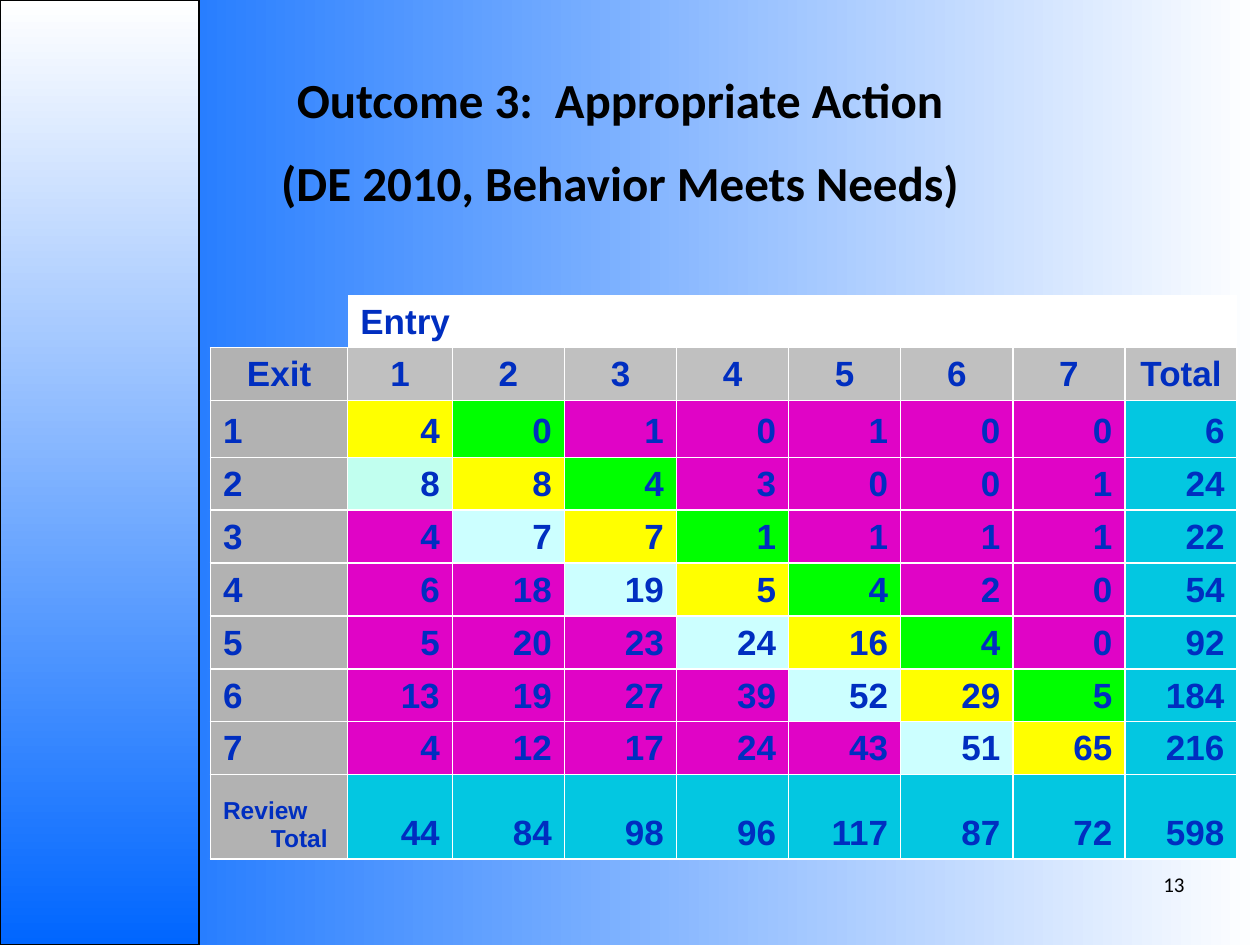
from dataclasses import dataclass

from lxml import etree
from pptx import Presentation, util as u
from pptx.dml.color import RGBColor
from pptx.enum import shapes, text
from pptx.oxml.ns import qn


@dataclass(frozen=True)
class Theme:
    heading_font: str = "Calibri"
    table_font: str = "Arial"
    title_size: float = 28
    table_size: float = 20
    review_size: float = 14
    number_size: float = 12
    black: str = "000000"
    white: str = "FFFFFF"
    blue: str = "0066FF"
    ink: str = "002EC0"
    label: str = "B2B2B2"
    header: str = "C0C0C0"
    same: str = "FFFF00"
    one_up: str = "00FF00"
    one_down: str = "CCFFFF"
    first_down: str = "C1FFEF"
    far: str = "E004C6"
    total: str = "03C7E1"


THEME = Theme()
ALIGN = text.PP_ALIGN
TITLE = ["Outcome 3:  Appropriate Action", "(DE 2010, Behavior Meets Needs)"]
PAGE_NUMBER = "13"
ENTRY_LABEL = "Entry"
HEADINGS = ["Exit", "1", "2", "3", "4", "5", "6", "7", "Total"]
REVIEW_LABEL = "Review Total"
EXIT_BY_ENTRY = [
    [4, 0, 1, 0, 1, 0, 0],
    [8, 8, 4, 3, 0, 0, 1],
    [4, 7, 7, 1, 1, 1, 1],
    [6, 18, 19, 5, 4, 2, 0],
    [5, 20, 23, 24, 16, 4, 0],
    [13, 19, 27, 39, 52, 29, 5],
    [4, 12, 17, 24, 43, 51, 65],
]
COLUMN_WIDTHS = [1.09, 0.83] + [0.89] * 7
ROW_HEIGHTS = [0.42] * 3 + [0.45] + [0.42] * 6 + [0.67]
HEADER_ROW = 2


def rgb(color):
    return RGBColor.from_string(color)


def set_gradient(fill, start, end, angle):
    fill.gradient()
    fill.gradient_angle = angle
    for stop, color in zip(fill.gradient_stops, (start, end)):
        stop.color.rgb = rgb(color)


def add_run(paragraph, words, font, size, color, bold):
    run = paragraph.add_run()
    run.text = words
    run.font.name = font
    run.font.size = u.Pt(size)
    run.font.color.rgb = rgb(color)
    run.font.bold = bold


def add_text(slide, lines, box, size, bold, align, anchor, auto_size):
    frame = slide.shapes.add_textbox(*map(u.Inches, box)).text_frame
    frame.word_wrap = True
    frame.auto_size = auto_size
    frame.vertical_anchor = anchor
    for index, line in enumerate(lines):
        paragraph = frame.add_paragraph() if index else frame.paragraphs[0]
        paragraph.alignment = align
        if index:
            paragraph.space_before = u.Pt(size / 2)
        add_run(paragraph, line, THEME.heading_font, size, THEME.black, bold)


def set_borders(cell, visible):
    properties = cell._tc.get_or_add_tcPr()
    for side in "LRTB":
        border = etree.SubElement(properties, qn(f"a:ln{side}"), w=str(u.Pt(1)))
        if side in visible:
            solid = etree.SubElement(border, qn("a:solidFill"))
            etree.SubElement(solid, qn("a:srgbClr"), val=THEME.white)
        else:
            etree.SubElement(border, qn("a:noFill"))


def style_cell(cell, color, borders):
    set_borders(cell, borders)
    cell.vertical_anchor = text.MSO_ANCHOR.BOTTOM
    if color:
        cell.fill.solid()
        cell.fill.fore_color.rgb = rgb(color)
    else:
        cell.fill.background()


def write_cell(cell, words, align, size=THEME.table_size):
    paragraph = cell.text_frame.paragraphs[0]
    paragraph.alignment = align
    properties = paragraph._p.get_or_add_pPr()
    properties.set("marL", str(u.Inches(0.38)))
    properties.set("indent", str(-u.Inches(0.38)))
    add_run(paragraph, words, THEME.table_font, size, THEME.ink, True)


def cell_color(row, column):
    if row < HEADER_ROW:
        return THEME.white if row and column else None
    if column == 0:
        return THEME.label
    if row == HEADER_ROW:
        return THEME.header
    if row == len(ROW_HEIGHTS) - 1 or column == len(COLUMN_WIDTHS) - 1:
        return THEME.total
    exit_score = row - HEADER_ROW
    if (exit_score, column) == (2, 1):
        return THEME.first_down
    bands = {0: THEME.same, 1: THEME.one_up, -1: THEME.one_down}
    return bands.get(column - exit_score, THEME.far)


def add_score_table(slide):
    scores = [row + [sum(row)] for row in EXIT_BY_ENTRY]
    scores.append([sum(column) for column in zip(*scores)])
    frame = slide.shapes.add_table(
        len(ROW_HEIGHTS), len(COLUMN_WIDTHS),
        *map(u.Inches, (1.67, 1.92, 8.17, 5.02)))
    table = frame.table
    table.first_row = table.horz_banding = False
    for column, width in zip(table.columns, COLUMN_WIDTHS):
        column.width = u.Inches(width)
    for row, height in zip(table.rows, ROW_HEIGHTS):
        row.height = u.Inches(height)
    frame.width, frame.height = u.Inches(8.17), u.Inches(5.02)

    for row in range(len(ROW_HEIGHTS)):
        borders = ("", "B", "LRTB")[min(row, HEADER_ROW)]
        for column in range(len(COLUMN_WIDTHS)):
            style_cell(table.cell(row, column), cell_color(row, column), borders)
    table.cell(0, 0).merge(table.cell(0, 1))
    table.cell(1, 1).merge(table.cell(1, 2))

    write_cell(table.cell(1, 1), ENTRY_LABEL, ALIGN.LEFT)
    for column, heading in enumerate(HEADINGS):
        write_cell(table.cell(HEADER_ROW, column), heading, ALIGN.CENTER)
    labels = HEADINGS[1:-1] + [REVIEW_LABEL]
    for row, (label, values) in enumerate(zip(labels, scores), HEADER_ROW + 1):
        size = THEME.review_size if label == REVIEW_LABEL else THEME.table_size
        write_cell(table.cell(row, 0), label, ALIGN.LEFT, size)
        for column, value in enumerate(values, 1):
            write_cell(table.cell(row, column), str(value), ALIGN.RIGHT)


def main():
    deck = Presentation()
    deck.slide_width, deck.slide_height = u.Inches(10), u.Inches(7.5)
    slide = deck.slides.add_slide(deck.slide_layouts[6])
    set_gradient(slide.background.fill, THEME.blue, THEME.white, 0)

    side_band = slide.shapes.add_shape(
        shapes.MSO_SHAPE.RECTANGLE, 0, 0, u.Inches(1.58), deck.slide_height)
    side_band.shadow.inherit = False
    set_gradient(side_band.fill, THEME.white, THEME.blue, 270)
    side_band.line.color.rgb = rgb(THEME.black)
    side_band.line.width = u.Pt(0.75)

    add_score_table(slide)
    add_text(slide, TITLE, (0.42, 0.5, 9, 1.28), THEME.title_size, True,
             ALIGN.CENTER, text.MSO_ANCHOR.TOP,
             text.MSO_AUTO_SIZE.SHAPE_TO_FIT_TEXT)
    add_text(slide, [PAGE_NUMBER], (8, 6.67, 1.5, 0.5), THEME.number_size, False,
             ALIGN.RIGHT, text.MSO_ANCHOR.BOTTOM, text.MSO_AUTO_SIZE.NONE)
    deck.save("out.pptx")


if __name__ == "__main__":
    main()
